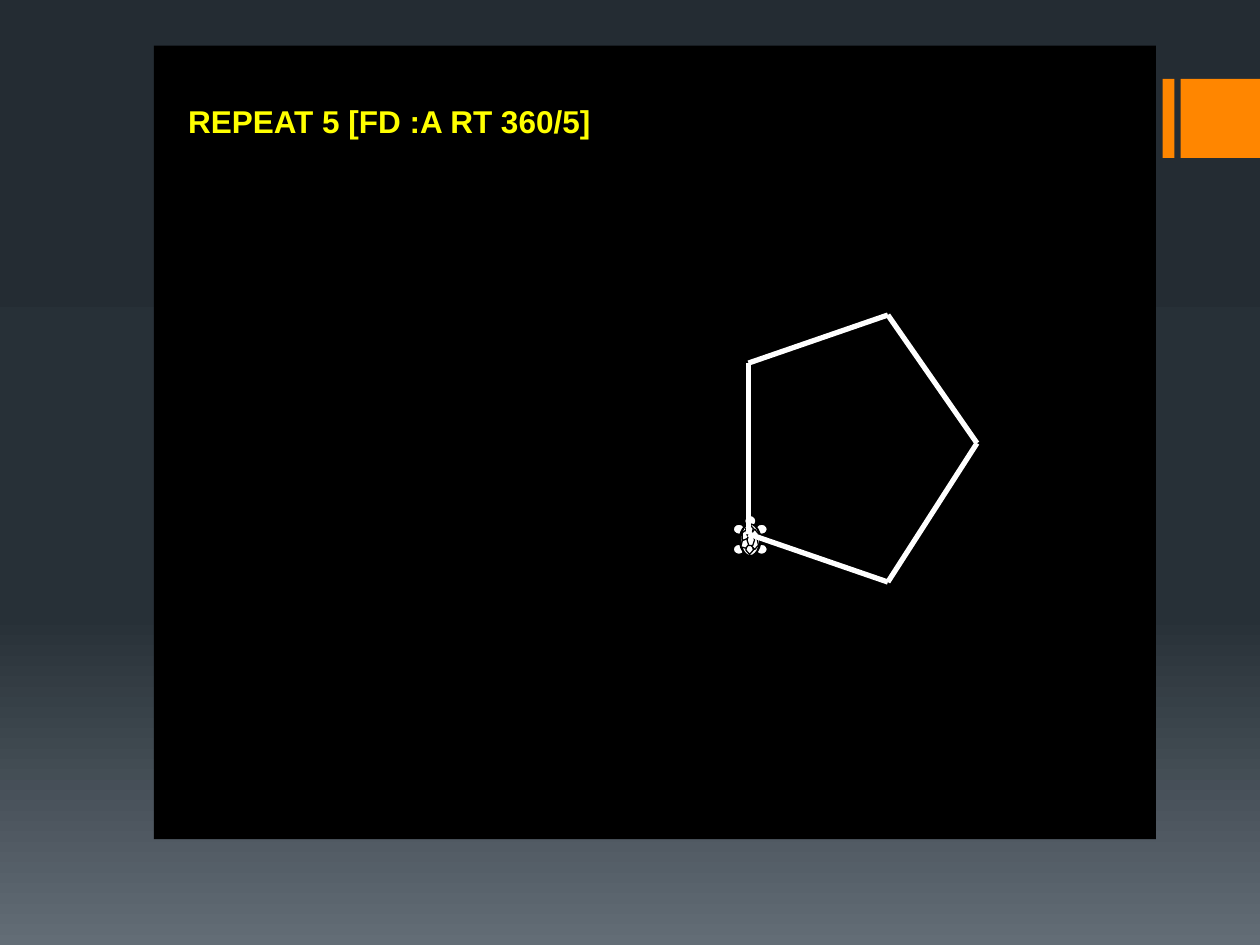
from copy import deepcopy
from itertools import product

from pptx import Presentation
from pptx.dml.color import RGBColor
from pptx.enum import shapes, text
from pptx.oxml import parse_xml
from pptx.oxml.ns import nsdecls
from pptx.util import Pt

BLACK = RGBColor(0x00, 0x00, 0x00)
WHITE = RGBColor(0xFF, 0xFF, 0xFF)
YELLOW = RGBColor(0xFF, 0xFF, 0x00)
ORANGE = RGBColor(0xFF, 0x86, 0x00)
BACKGROUND_STOPS = [
    (0, RGBColor(0x24, 0x2C, 0x33)),
    (0.65, RGBColor(0x27, 0x30, 0x37)),
    (1, RGBColor(0x63, 0x6D, 0x76)),
]
KIND = shapes.MSO_SHAPE


def add_filled(parent, kind, box, fill, line=None, rotation=0):
    shape = parent.add_shape(kind, *map(Pt, box))
    shape.shadow.inherit = False
    shape.rotation = rotation
    shape.fill.solid()
    shape.fill.fore_color.rgb = fill
    if line is None:
        shape.line.fill.background()
    else:
        shape.line.color.rgb = line
        shape.line.width = Pt(0.75)
    return shape


def paint_background(slide):
    fill = slide.background.fill
    fill.gradient()
    fill.gradient_angle = 270
    # A new gradient has two stops; a third is needed
    stop_list = slide.element.xpath(".//a:gsLst")[0]
    stop_list.append(deepcopy(stop_list[-1]))
    for stop, (position, color) in zip(fill.gradient_stops, BACKGROUND_STOPS):
        stop.position = position
        stop.color.rgb = color


def add_side_tab(slide, left, top, width, height):
    bar, gap = 6.7, 3.6
    add_filled(slide.shapes, KIND.RECTANGLE, (left, top, bar, height), ORANGE)
    block_left = left + bar + gap
    add_filled(slide.shapes, KIND.RECTANGLE,
               (block_left, top, width - bar - gap, height), ORANGE)


def add_turtle(slide, left, top):
    group = slide.shapes.add_group_shape()

    def add_part(kind, x, y, width, height, fill=WHITE, rotation=0):
        add_filled(group.shapes, kind, (left + x, top + y, width, height),
                   fill, BLACK, rotation)

    # Head and legs
    add_part(KIND.OVAL, 6.5, 0, 6.5, 6.5)
    for y, x in product((5, 16.5), (0, 13)):
        add_part(KIND.OVAL, x, y, 6.5, 5.8)

    # Shell with its rim
    add_part(KIND.OVAL, 3.6, 5, 12.2, 18, BLACK)
    add_part(KIND.OVAL, 4.3, 5, 10.8, 18)

    # Shell plates: left, top, width, height, rotation
    plates = [
        (5, 7.9, 4.3, 6.5, 11.4),
        (7.2, 15.8, 4.3, 6.5, 180),
        (3.6, 13.7, 6.5, 4.3, 311.2),
        (10.1, 7.9, 4.3, 6.5, 0),
        (7.2, 5, 4.3, 6.5, 0),
        (10.1, 13, 4.3, 6.5, 180),
    ]
    for *box, rotation in plates:
        add_part(KIND.REGULAR_PENTAGON, *box, rotation=rotation)
    add_part(KIND.HEXAGON, 7.9, 10.8, 4.3, 6.5)


def add_pentagon_path(slide, left, top, width, height):
    # Corners as shares of the box, in drawing order
    corners = [(0, 0.82), (0, 0.18), (0.61, 0), (1, 0.48), (0.61, 1)]
    points = [(Pt(left + x * width), Pt(top + y * height)) for x, y in corners]
    for start, end in zip(points, points[1:] + points[:1]):
        side = slide.shapes.add_connector(
            shapes.MSO_CONNECTOR.STRAIGHT, *start, *end)
        side.line.color.rgb = WHITE
        side.line.width = Pt(3)
        side.element.spPr.append(
            parse_xml(f"<a:effectLst {nsdecls('a')}/>"))


def add_command(slide, left, top, width, height):
    command = slide.shapes.add_textbox(*map(Pt, (left, top, width, height)))
    frame = command.text_frame
    frame.word_wrap = False
    frame.auto_size = text.MSO_AUTO_SIZE.SHAPE_TO_FIT_TEXT
    paragraph = frame.paragraphs[0]
    paragraph.text = "REPEAT 5 [FD :A RT 360/5]"
    paragraph.alignment = text.PP_ALIGN.CENTER
    font = paragraph.runs[0].font
    for name, value in {"name": "Arial", "size": Pt(18), "bold": True}.items():
        setattr(font, name, value)
    font.color.rgb = YELLOW


def main():
    presentation = Presentation()
    presentation.slide_width = Pt(720)
    presentation.slide_height = Pt(540)
    slide = presentation.slides.add_slide(presentation.slide_layouts[6])

    paint_background(slide)
    add_side_tab(slide, 664.4, 45.1, 55.6, 45.1)

    # Drawing screen
    add_filled(slide.shapes, KIND.RECTANGLE, (88, 26.1, 572.5, 453.4), BLACK)
    add_turtle(slide, 419, 294.5)
    add_pentagon_path(slide, 427.7, 180, 130.6, 152.6)
    add_command(slide, 99.4, 54.9, 246.2, 28.8)

    presentation.save("out.pptx")


if __name__ == "__main__":
    main()
